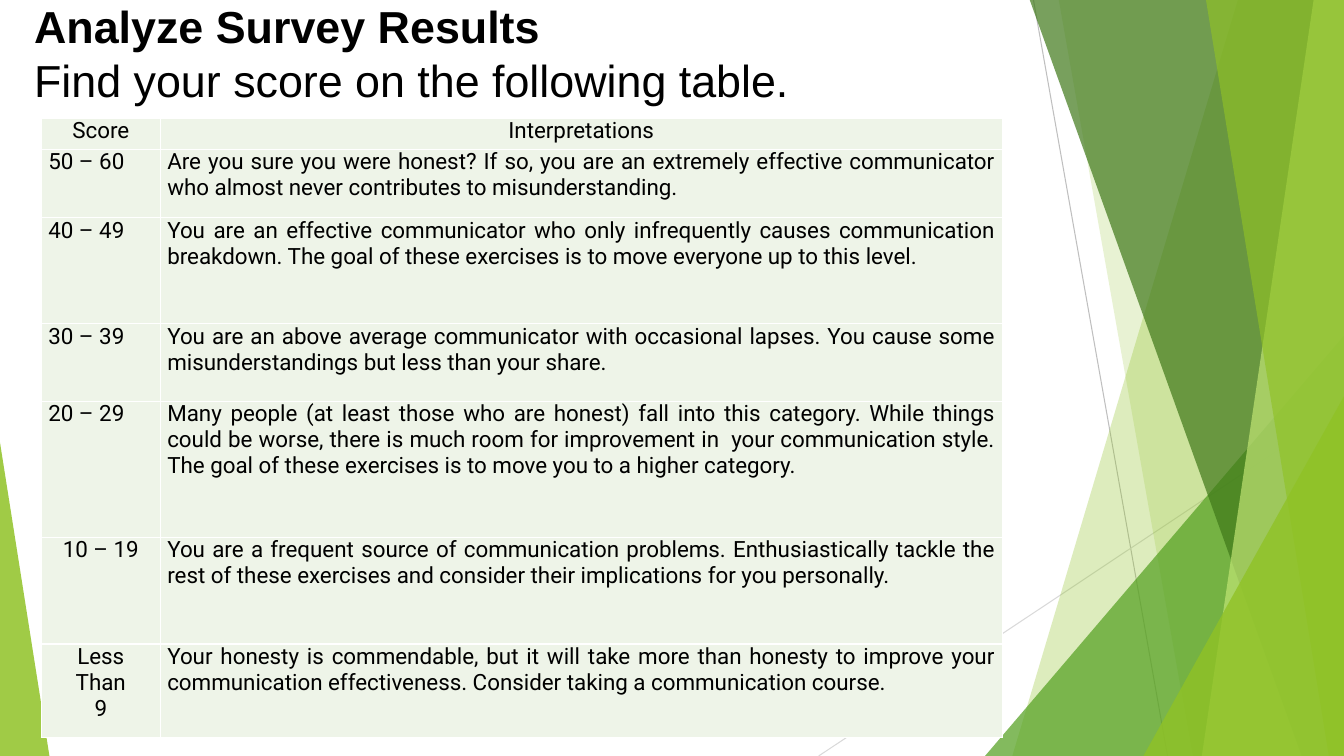
from lxml.etree import SubElement
from pptx import Presentation
from pptx.dml.color import RGBColor
from pptx.enum.shapes import MSO_CONNECTOR, MSO_SHAPE
from pptx.enum.text import MSO_ANCHOR, PP_ALIGN
from pptx.oxml import parse_xml
from pptx.oxml.ns import nsdecls, qn
from pptx.util import Pt

PX = 9144
WIDTH, HEIGHT = 1333, 750
COLORS = {
    "text": "000000", "cell": "EEF4E8", "border": "FFFFFF",
    "steep line": "BFBFBF", "shallow line": "D9D9D9",
    "lime": "90C226", "green": "54A021", "forest": "3F7819", "pale": "C0E474",
}
CENTER, JUSTIFY = PP_ALIGN.CENTER, PP_ALIGN.JUSTIFY
COLUMNS = [118, 835]
ROWS = [
    (31, CENTER, "Score", CENTER, "Interpretations"),
    (68, JUSTIFY, "50 – 60", JUSTIFY,
     "Are you sure you were honest? If so, you are an extremely effective communicator "
     "who almost never contributes to misunderstanding."),
    (105, JUSTIFY, "40 – 49", JUSTIFY,
     "You are an effective communicator who only infrequently causes communication "
     "breakdown. The goal of these exercises is to move everyone up to this level."),
    (77, JUSTIFY, "30 – 39", JUSTIFY,
     "You are an above average communicator with occasional lapses. You cause some "
     "misunderstandings but less than your share."),
    (135, JUSTIFY, "20 – 29", JUSTIFY,
     "Many people (at least those who are honest) fall into this category. While things "
     "could be worse, there is much room for improvement in  your communication style. "
     "The goal of these exercises is to move you to a higher category."),
    (106, CENTER, "10 – 19", JUSTIFY,
     "You are a frequent source of communication problems. Enthusiastically tackle the "
     "rest of these exercises and consider their implications for you personally."),
    (93, CENTER, "Less\nThan\n9", JUSTIFY,
     "Your honesty is commendable, but it will take more than honesty to improve your "
     "communication effectiveness. Consider taking a communication course."),
]


def rgb(name):
    return RGBColor.from_string(COLORS[name])


def emu(*lengths):
    return [length * PX for length in lengths]


def set_font(paragraph, name, size, bold=False):
    font = paragraph.font
    font.name, font.size, font.bold = name, Pt(size), bold
    font.color.rgb = rgb("text")


def paint(shape, color, opacity):
    shape.shadow.inherit = False
    shape.line.fill.background()
    shape.fill.solid()
    shape.fill.fore_color.rgb = rgb(color)
    color_element = shape.fill._xPr.find(qn("a:solidFill"))[0]
    SubElement(color_element, qn("a:alpha"), val=str(opacity * 1000))


def add_line(slide, color, *ends):
    line = slide.shapes.add_connector(MSO_CONNECTOR.STRAIGHT, *emu(*ends))
    line.line.color.rgb = rgb(color)
    line.line.width = Pt(0.75)
    SubElement(line._element.spPr, qn("a:effectLst"))


def add_facet(slide, right, bottom, top_inset, bottom_inset, color, opacity):
    top = -1
    builder = slide.shapes.build_freeform(right - top_inset, top, scale=PX)
    builder.add_line_segments(
        [(right, top), (right, bottom), (right - bottom_inset, bottom)])
    paint(builder.convert_to_shape(), color, opacity)


def add_triangle(slide, left, bottom, width, height, apex, color, opacity):
    triangle = slide.shapes.add_shape(
        MSO_SHAPE.ISOSCELES_TRIANGLE, *emu(left, bottom - height, width, height))
    triangle.adjustments[0] = apex
    paint(triangle, color, opacity)


def add_backdrop(slide, left, top, width, height):
    right, bottom = left + width, top + height
    add_line(slide, "steep line", right - 308, top, right - 175, bottom)
    add_line(slide, "shallow line", right, top + 403, right - 521, bottom)
    add_facet(slide, right, bottom, 105, 329, "lime", 30)
    add_facet(slide, right, bottom, 283, 150, "lime", 20)
    add_triangle(slide, right - 356, bottom, 356, 417, 1, "green", 72)
    add_facet(slide, right, bottom, 312, 42, "forest", 70)
    add_facet(slide, right, bottom, 30, 141, "pale", 70)
    add_facet(slide, right, bottom, 137, 15, "lime", 65)
    add_triangle(slide, right - 199, bottom, 199, 357, 1, "lime", 80)
    add_triangle(slide, left, bottom, 49, 311, 0, "lime", 85)


def fill_cell(cell, text, alignment):
    cell.margin_left = cell.margin_right = 7 * PX
    cell.margin_top = cell.margin_bottom = 0
    cell.fill.solid()
    cell.fill.fore_color.rgb = rgb("cell")
    properties = cell._tc.get_or_add_tcPr()
    for index, side in enumerate("LRTB"):
        properties.insert(index, parse_xml(
            f'<a:ln{side} {nsdecls("a")} w="12700"><a:solidFill>'
            f'<a:srgbClr val="{COLORS["border"]}"/></a:solidFill></a:ln{side}>'))
    cell.text_frame.text = text
    for paragraph in cell.text_frame.paragraphs:
        paragraph.alignment = alignment
        set_font(paragraph, "Roboto", 16)


def add_score_table(slide, left, top, width, height):
    table = slide.shapes.add_table(
        len(ROWS), len(COLUMNS), *emu(left, top, width, height)).table
    table.first_row = table.horz_banding = False
    for column, column_width in zip(table.columns, COLUMNS):
        column.width = column_width * PX
    for row, (row_height, score_align, score, text_align, text) in zip(table.rows, ROWS):
        row.height = row_height * PX
        fill_cell(row.cells[0], score, score_align)
        fill_cell(row.cells[1], text, text_align)


def add_title(slide, left, top, width, height):
    frame = slide.shapes.add_textbox(*emu(left, top, width, height)).text_frame
    frame.word_wrap = True
    frame.vertical_anchor = MSO_ANCHOR.TOP
    frame.margin_top = 9 * PX
    frame.text = "Analyze Survey Results\nFind your score on the following table."
    heading, instruction = frame.paragraphs
    set_font(heading, "Arial", 32, bold=True)
    set_font(instruction, "Arial", 32)


def main():
    presentation = Presentation()
    presentation.slide_width, presentation.slide_height = emu(WIDTH, HEIGHT)
    slide = presentation.slides.add_slide(presentation.slide_layouts[6])
    add_backdrop(slide, 0, 0, WIDTH, HEIGHT)
    add_score_table(slide, 41, 117, sum(COLUMNS), sum(row[0] for row in ROWS))
    add_title(slide, 24, -10, WIDTH - 24, 148)
    presentation.save("out.pptx")


if __name__ == "__main__":
    main()
